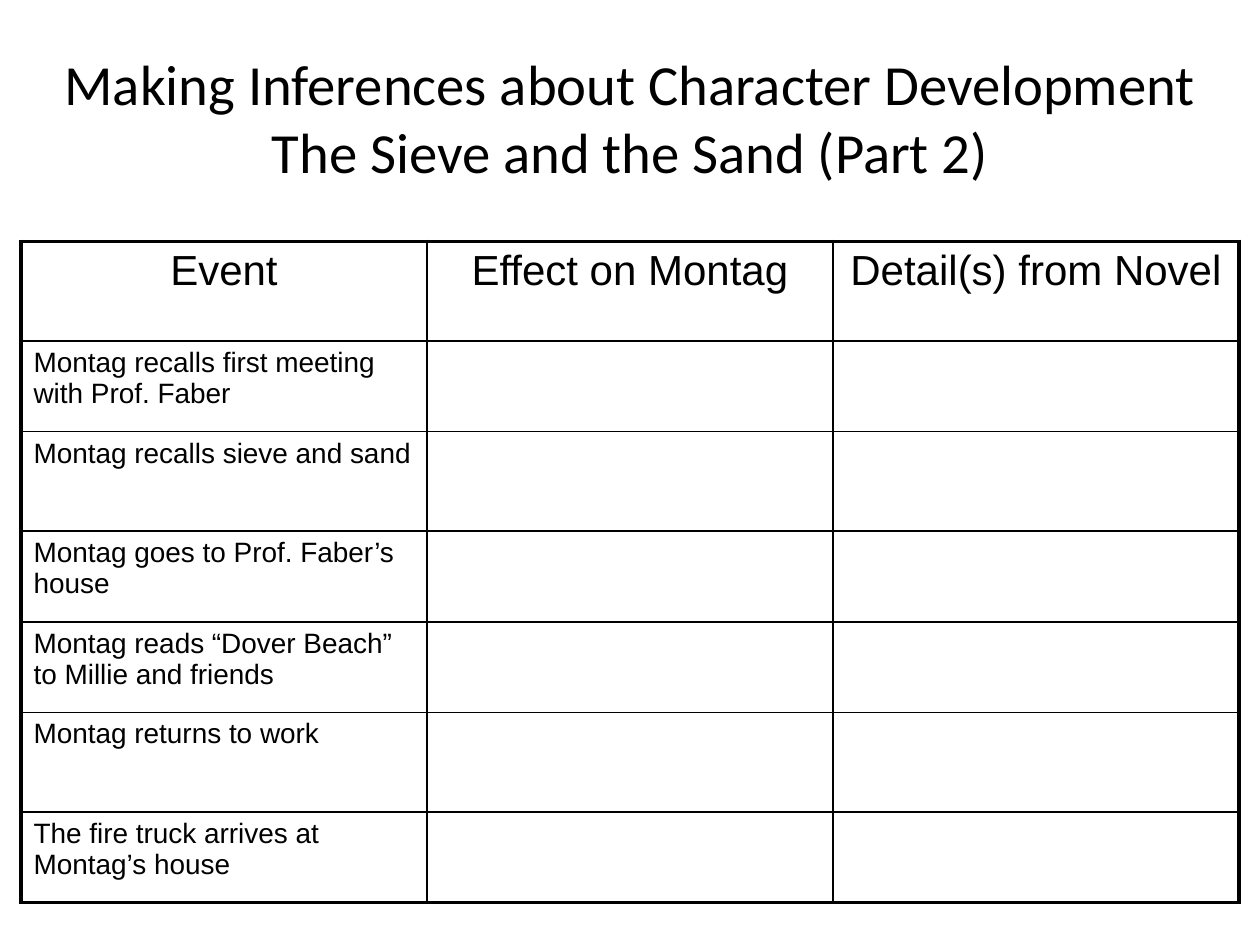
from dataclasses import dataclass

import pptx
import pptx.dml.color
import pptx.enum.text
import pptx.oxml
import pptx.oxml.ns
import pptx.util
from lxml import etree

Inches, Pt = pptx.util.Inches, pptx.util.Pt
Align = pptx.enum.text.PP_ALIGN
Anchor = pptx.enum.text.MSO_ANCHOR


@dataclass(frozen=True)
class Theme:
    ink: str = "000000"
    title_font: str = "Calibri"
    table_font: str = "Arial"
    title_size: float = 32.4
    header_size: float = 24
    event_size: float = 16
    outer_line: float = 2.25
    inner_line: float = 1


@dataclass(frozen=True)
class Box:
    left: float
    top: float
    width: float
    height: float

    def place(self, prs) -> tuple[int, int, int, int]:
        w, h = prs.slide_width, prs.slide_height
        return (round(self.left * w), round(self.top * h),
                round(self.width * w), round(self.height * h))


@dataclass(frozen=True)
class Row:
    height: float
    texts: tuple[str, ...]
    size: float
    align: Align


THEME = Theme()
MARGIN = 1 / 60
TITLE_BOX = Box(MARGIN, 0.04, 1 - 2 * MARGIN, 1 / 6)
TABLE_BOX = Box(MARGIN, 0.2555, 1 - 2 * MARGIN, 0.7)
TALL, SHORT = 0.79, 0.72
TITLE = "Making Inferences about Character Development\vThe Sieve and the Sand (Part 2)"
HEADERS = ("Event", "Effect on Montag", "Detail(s) from Novel")
EVENTS = (
    (SHORT, "Montag recalls first meeting with Prof. Faber"),
    (TALL, "Montag recalls sieve and sand"),
    (SHORT, "Montag goes to Prof. Faber’s house"),
    (SHORT, "Montag reads “Dover Beach” to Millie and friends"),
    (TALL, "Montag returns to work"),
    (SHORT, "The fire truck arrives at Montag’s house"),
)
ROWS = (
    Row(TALL, HEADERS, THEME.header_size, Align.CENTER),
    *(Row(height, (event, "", ""), THEME.event_size, Align.LEFT)
      for height, event in EVENTS),
)


def write(tf, text: str, font: str, size: float, align: Align) -> None:
    tf.text = text
    for p in tf.paragraphs:
        p.alignment = align
        for r in p.runs:
            r.font.name = font
            r.font.size = Pt(size)
            r.font.color.rgb = pptx.dml.color.RGBColor.from_string(THEME.ink)


def draw_title(prs, s) -> None:
    tf = s.shapes.add_textbox(*TITLE_BOX.place(prs)).text_frame
    tf.word_wrap = True
    tf.vertical_anchor = Anchor.MIDDLE
    write(tf, TITLE, THEME.title_font, THEME.title_size, Align.CENTER)


def set_borders(cell, outer_sides: dict[str, bool]) -> None:
    qn = pptx.oxml.ns.qn
    tc_pr = cell._tc.get_or_add_tcPr()
    for side, is_outer in outer_sides.items():
        width = THEME.outer_line if is_outer else THEME.inner_line
        ln = etree.SubElement(tc_pr, qn(f"a:ln{side}"), w=str(Pt(width)))
        fill = etree.SubElement(ln, qn("a:solidFill"))
        etree.SubElement(fill, qn("a:srgbClr"), val=THEME.ink)


def draw_table(prs, s) -> None:
    n_rows, n_cols = len(ROWS), len(HEADERS)
    left, top, width, height = TABLE_BOX.place(prs)
    table = s.shapes.add_table(n_rows, n_cols, left, top, width, height).table
    table.first_row = False
    table.horz_banding = False
    for column in table.columns:
        column.width = width // n_cols
    for i, row in enumerate(ROWS):
        table.rows[i].height = Inches(row.height)
        for j, text in enumerate(row.texts):
            cell = table.cell(i, j)
            write(cell.text_frame, text, THEME.table_font, row.size, row.align)
            set_borders(cell, {"L": j == 0, "R": j == n_cols - 1,
                               "T": i == 0, "B": i == n_rows - 1})
            cell.fill.background()


def main() -> None:
    prs = pptx.Presentation()
    prs.slide_width, prs.slide_height = Inches(10), Inches(7.5)
    s = prs.slides.add_slide(prs.slide_layouts[6])
    draw_title(prs, s)
    draw_table(prs, s)
    prs.save("out.pptx")


if __name__ == "__main__":
    main()
